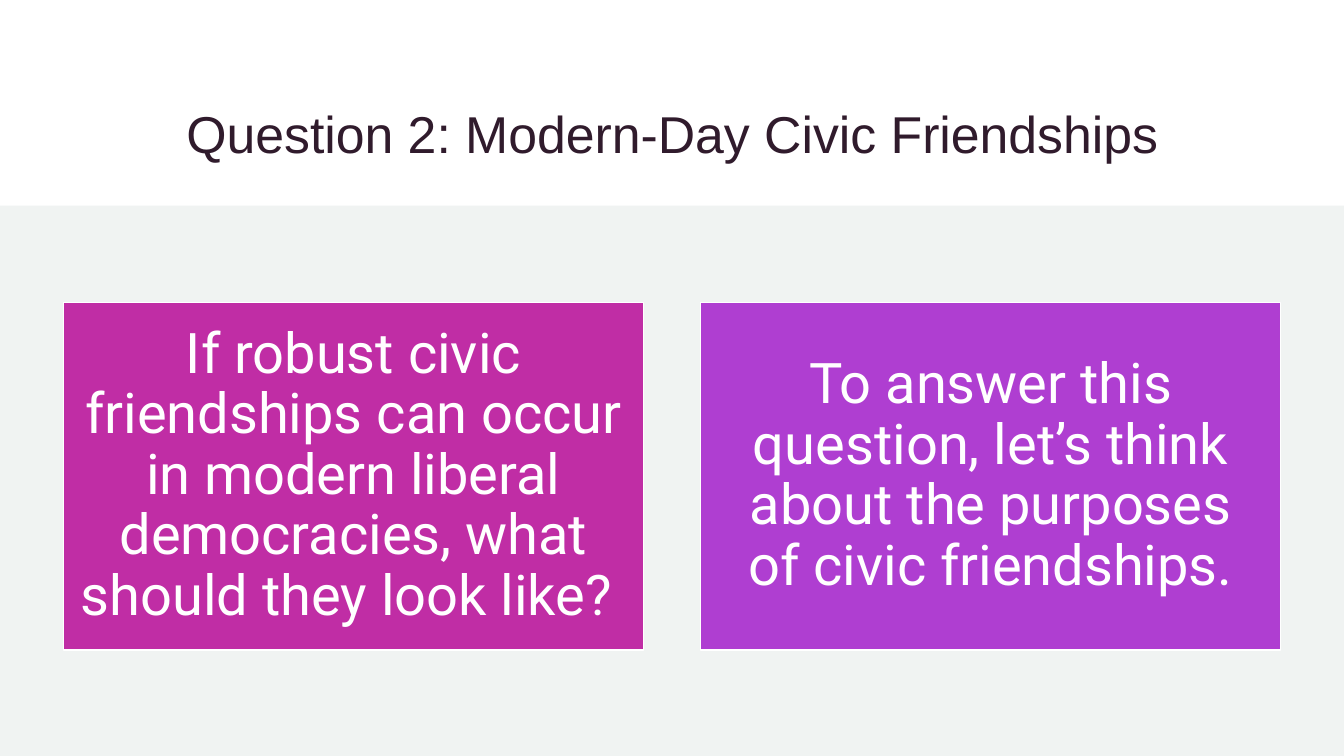
import pptx
import pptx.dml.color
import pptx.enum.shapes
import pptx.enum.text
import pptx.util
from pptx.util import Inches

COLORS = {
    "white": "FFFFFF",
    "band": "F0F3F2",
    "title": "301B2C",
    "magenta": "C02DA5",
    "purple": "AF3ED1",
}


class QuestionSlide:
    """Holds the slide and the style of its elements."""

    title_font, card_font = "Arial", "Roboto"
    title_size, card_size = 37, 40
    card_inset = 0.17

    def __init__(self, deck):
        self.slide = deck.slides.add_slide(deck.slide_layouts[5])
        self.paint(self.slide.background.fill, "white")

    def paint(self, fill, color):
        fill.solid()
        fill.fore_color.rgb = pptx.dml.color.RGBColor.from_string(COLORS[color])

    def set_text(self, frame, text, font, size, color):
        """Fill a frame with one centred, formatted paragraph."""
        frame.text = text
        frame.word_wrap = True
        frame.auto_size = pptx.enum.text.MSO_AUTO_SIZE.NONE
        frame.vertical_anchor = pptx.enum.text.MSO_ANCHOR.MIDDLE
        paragraph = frame.paragraphs[0]
        paragraph.alignment = pptx.enum.text.PP_ALIGN.CENTER
        style = paragraph.runs[0].font
        style.name, style.size = font, pptx.util.Pt(size)
        self.paint(style.fill, color)
        return paragraph

    def title(self, text, left, top, width, height):
        heading = self.slide.shapes.title
        heading.left, heading.top = Inches(left), Inches(top)
        heading.width, heading.height = Inches(width), Inches(height)
        self.set_text(heading.text_frame, text, self.title_font, self.title_size, "title")

    def block(self, color, left, top, width, height):
        rectangle = self.slide.shapes.add_shape(
            pptx.enum.shapes.MSO_SHAPE.RECTANGLE,
            Inches(left), Inches(top), Inches(width), Inches(height))
        rectangle.shadow.inherit = False
        self.paint(rectangle.fill, color)
        rectangle.line.fill.background()
        return rectangle

    def card(self, text, color, left, top, width, height):
        card = self.block(color, left, top, width, height)
        self.paint(card.line.fill, "white")
        card.line.width = pptx.util.Pt(1)
        frame = card.text_frame
        frame.margin_left = frame.margin_right = Inches(self.card_inset)
        frame.margin_top = frame.margin_bottom = Inches(self.card_inset)
        paragraph = self.set_text(frame, text, self.card_font, self.card_size, "white")
        paragraph.line_spacing = 0.9


def main():
    deck = pptx.Presentation()
    deck.slide_width, deck.slide_height = Inches(13.33), Inches(7.5)

    question = QuestionSlide(deck)
    question.title("Question 2: Modern-Day Civic Friendships", 1.56, 0.77, 10.22, 1.09)
    question.block("band", 0, 2.04, 13.33, 5.46)

    cards = [
        ("If robust civic friendships can occur in modern liberal democracies, "
         "what should they look like? ", "magenta"),
        ("To answer this question, let’s think about the purposes of civic "
         "friendships.", "purple"),
    ]
    card_width, gap = 5.75, 0.57
    for column, (text, color) in enumerate(cards):
        left = 0.63 + column * (card_width + gap)
        question.card(text, color, left, 3, card_width, 3.45)

    deck.save("out.pptx")


if __name__ == "__main__":
    main()
